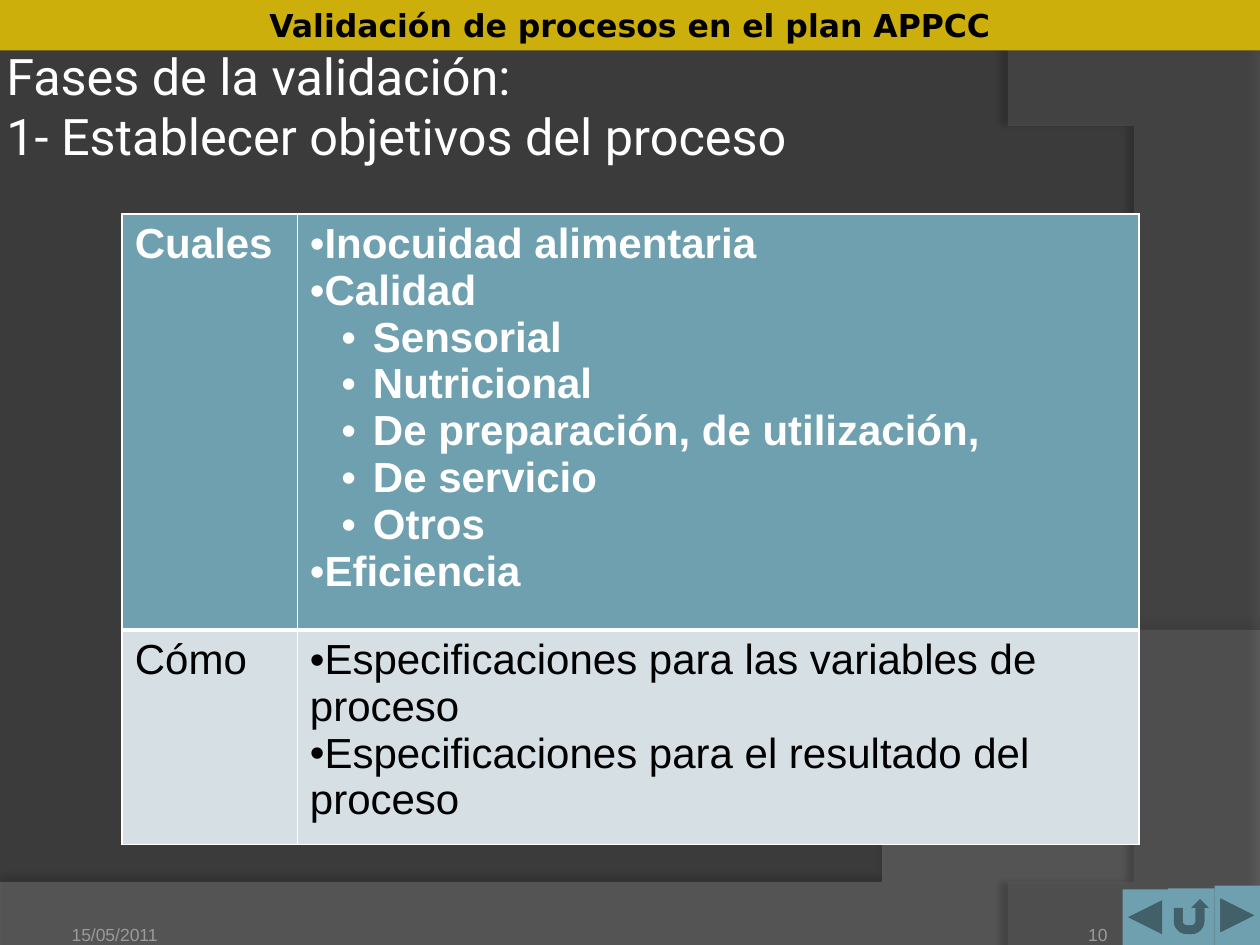
from lxml.etree import SubElement
from pptx import Presentation
from pptx.dml.color import RGBColor
from pptx.enum.shapes import MSO_SHAPE
from pptx.enum.text import MSO_ANCHOR, MSO_AUTO_SIZE, PP_ALIGN
from pptx.oxml.ns import qn
from pptx.util import Emu, Inches, Pt

WIDTH, HEIGHT = 10, 7.5
TEAL, PALE, WHITE, BLACK, GRAY = "6EA0B0", "D5DFE4", "FFFFFF", "000000", "9D9B9A"
BANNER = "Validación de procesos en el plan APPCC"
TITLE = ["Fases de la validación: ", "1- Establecer objetivos del proceso"]
ROWS = [
    ("Cuales", [("Inocuidad alimentaria", 0), ("Calidad", 0), ("Sensorial", 1),
                ("Nutricional", 1), ("De preparación, de utilización,", 1),
                ("De servicio", 1), ("Otros", 1), ("Eficiencia", 0)]),
    ("Cómo", [("Especificaciones para las variables de proceso", 0),
              ("Especificaciones para el resultado del proceso", 0)]),
]
ROW_STYLES = [(TEAL, WHITE, True), (PALE, BLACK, False)]
COLUMN_WIDTHS, ROW_HEIGHTS = [1.39, 6.68], [3.23, 1.59]
SWOOSHES = [
    ([(0, 7.05), (0, 7.5), (10, 7.5), (10, 5.2)],
     [(5.59, 7.29), (3.91, 7.19), (0, 7.05)], ("7F7F7F", 45), (35, 4, 3.5, 270)),
    ([(10, 0.02), (10, 7.5), (8.21, 7.5)],
     [(9.35, 6.19), (10.18, 3), (8, 0)], ("5E5E5E", 40), (45, 4, 4, 180)),
]
BUTTONS = [
    (MSO_SHAPE.ACTION_BUTTON_BACK_OR_PREVIOUS, 8.91, 7.06),
    (MSO_SHAPE.ACTION_BUTTON_RETURN, 9.27, 7.05),
    (MSO_SHAPE.ACTION_BUTTON_FORWARD_OR_NEXT, 9.64, 7.03),
]
FOOTERS = [
    ("15/05/2011", 0.47, 2.33, 0.1, PP_ALIGN.LEFT),
    ("10", 7.96, 0.83, 0, PP_ALIGN.RIGHT),
]


def paint(fill, color):
    fill.solid()
    fill.fore_color.rgb = RGBColor.from_string(color)


def write(paragraph, text, size, font, color, bold=False):
    run = paragraph.add_run()
    run.text = text
    run.font.size, run.font.name, run.font.bold = Pt(size), font, bold
    run.font.color.rgb = RGBColor.from_string(color)


def set_insets(frame, side, top, bottom):
    frame.margin_left = frame.margin_right = Inches(side)
    frame.margin_top, frame.margin_bottom = Inches(top), Inches(bottom)


def plain_shape(slide, kind, left, top, width, height, color):
    shape = slide.shapes.add_shape(kind, *map(Inches, (left, top, width, height)))
    paint(shape.fill, color)
    shape.line.fill.background()
    shape.shadow.inherit = False
    return shape


def curve(start, control_1, control_2, end, steps=60):
    for step in range(1, steps + 1):
        t = step / steps
        weights = ((1 - t) ** 3, 3 * t * (1 - t) ** 2, 3 * t * t * (1 - t), t ** 3)
        yield tuple(sum(w * p[axis] for w, p in zip(weights, (start, control_1, control_2, end)))
                    for axis in (0, 1))


def add_swoosh(slide, corners, bend, fill, shadow):
    color, opacity = fill
    builder = slide.shapes.build_freeform(*corners[0], scale=Inches(1))
    builder.add_line_segments(corners[1:] + list(curve(corners[-1], *bend)), close=True)
    swoosh = builder.convert_to_shape()
    paint(swoosh.fill, color)
    swoosh.line.fill.background()
    swoosh.shadow.inherit = False
    properties = swoosh.element.spPr
    fill_color = properties.find(qn("a:solidFill"))[0]
    SubElement(fill_color, qn("a:alpha"), val=str(opacity * 1000))
    darkness, blur, distance, angle = shadow
    outer = SubElement(properties.find(qn("a:effectLst")), qn("a:outerShdw"),
                       blurRad=str(Pt(blur)), dist=str(Pt(distance)),
                       dir=str(angle * 60000), rotWithShape="0")
    shadow_color = SubElement(outer, qn("a:srgbClr"), val=BLACK)
    SubElement(shadow_color, qn("a:alpha"), val=str(darkness * 1000))


def set_borders(cell, widths):
    properties = cell._tc.get_or_add_tcPr()
    for side, width in zip("LRTB", widths):
        border = SubElement(properties, qn(f"a:ln{side}"), w=str(Pt(width)))
        SubElement(SubElement(border, qn("a:solidFill")), qn("a:srgbClr"), val=WHITE)


def add_bullet(paragraph, level):
    properties = paragraph._p.get_or_add_pPr()
    paragraph.level = level
    properties.set("marL", str(Inches(0.5 * level)))
    properties.set("indent", str(Inches(-0.25 * level)))
    SubElement(properties, qn("a:buFont"), typeface="Arial")
    SubElement(properties, qn("a:buChar"), char="•")


def add_objectives(slide):
    table = slide.shapes.add_table(
        len(ROWS), 2, Inches(0.97), Inches(1.7),
        Inches(sum(COLUMN_WIDTHS)), Inches(sum(ROW_HEIGHTS))).table
    for column, width in zip(table.columns, COLUMN_WIDTHS):
        column.width = Inches(width)
    for index, ((question, answers), (fill, color, bold)) in enumerate(zip(ROWS, ROW_STYLES)):
        table.rows[index].height = Inches(ROW_HEIGHTS[index])
        label, detail = table.cell(index, 0), table.cell(index, 1)
        for cell in (label, detail):
            set_borders(cell, (1, 1, 3 if index else 1, 1 if index else 3))
            paint(cell.fill, fill)
        write(label.text_frame.paragraphs[0], question, 24, "Arial", color, bold)
        for number, (answer, level) in enumerate(answers):
            frame = detail.text_frame
            paragraph = frame.add_paragraph() if number else frame.paragraphs[0]
            add_bullet(paragraph, level)
            write(paragraph, answer, 24, "Arial", color, bold)


def add_title(slide):
    title = slide.shapes.title
    title.left, title.top, title.width, title.height = map(Inches, (0, 0.42, WIDTH, 0.83))
    frame = title.text_frame
    frame.auto_size, frame.word_wrap = MSO_AUTO_SIZE.NONE, True
    frame.vertical_anchor = MSO_ANCHOR.MIDDLE
    set_insets(frame, 0.05, 0.05, 0.05)
    heading = frame.paragraphs[0]
    heading.alignment = PP_ALIGN.LEFT
    for number, line in enumerate(TITLE):
        if number:
            heading.add_line_break()
        write(heading, line, 28.8, "Roboto", WHITE)


def main():
    deck = Presentation()
    deck.slide_width, deck.slide_height = Inches(WIDTH), Inches(HEIGHT)
    slide = deck.slides.add_slide(deck.slide_layouts[5])
    paint(slide.background.fill, "3B3B3B")
    for swoosh in SWOOSHES:
        add_swoosh(slide, *swoosh)

    banner = plain_shape(slide, MSO_SHAPE.RECTANGLE, 0, 0, WIDTH, 0.4, "CCAF0A")
    banner.text_frame.vertical_anchor = MSO_ANCHOR.MIDDLE
    banner_line = banner.text_frame.paragraphs[0]
    banner_line.alignment = PP_ALIGN.CENTER
    write(banner_line, BANNER, 18, "DejaVu Sans", BLACK, True)

    rights = [left for _, left, _ in BUTTONS[1:]] + [WIDTH]
    for (kind, left, top), right in zip(BUTTONS, rights):
        plain_shape(slide, kind, left, top, right - left, HEIGHT - top, TEAL)

    add_title(slide)
    for text, left, width, inset, alignment in FOOTERS:
        frame = slide.shapes.add_textbox(*map(Inches, (left, 7.1, width, 0.4))).text_frame
        frame.word_wrap, frame.vertical_anchor = True, MSO_ANCHOR.BOTTOM
        set_insets(frame, inset, inset / 2, 0)
        frame.paragraphs[0].alignment = alignment
        write(frame.paragraphs[0], text, 10, "Arial", GRAY)
    add_objectives(slide)
    deck.save("out.pptx")


if __name__ == "__main__":
    main()
